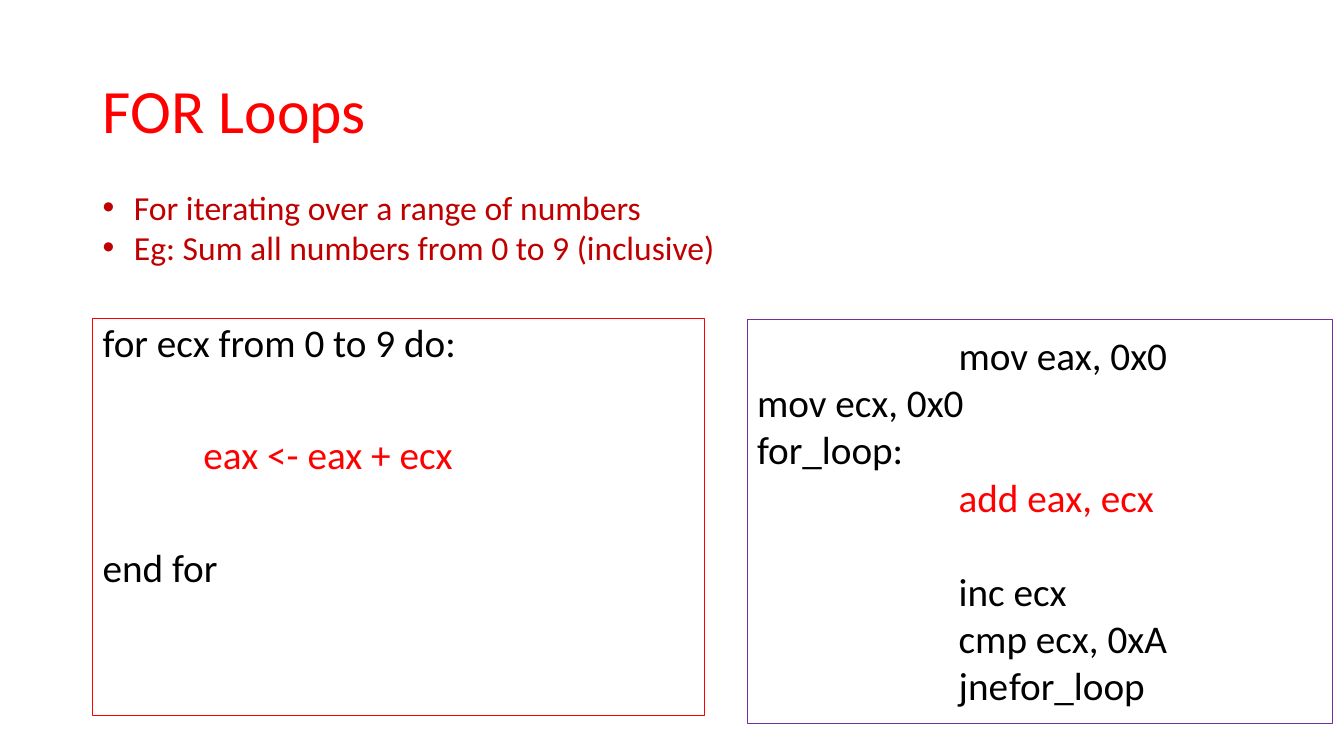
from lxml import etree
from pptx import Presentation
from pptx.dml.color import RGBColor
from pptx.enum.shapes import MSO_SHAPE
from pptx.enum.text import MSO_ANCHOR, PP_ALIGN
from pptx.oxml.ns import qn
from pptx.util import Inches, Pt

RECTANGLE = MSO_SHAPE.RECTANGLE
LEFT = PP_ALIGN.LEFT
TOP, MIDDLE = MSO_ANCHOR.TOP, MSO_ANCHOR.MIDDLE
TITLE_ONLY = 5
COLORS = {
    "red": "FF0000",
    "dark_red": "C00000",
    "purple": "7030A0",
    "black": "000000",
}


def color(name):
    return RGBColor.from_string(COLORS[name])


def place(shape, left, top, width, height):
    shape.left, shape.top = Inches(left), Inches(top)
    shape.width, shape.height = Inches(width), Inches(height)


def write(frame, text, *, size=28, ink="black", spacing=1.0, before=0,
          indent=0, bullet=False):
    para = frame.paragraphs[0]
    if para.runs:
        para = frame.add_paragraph()
    para.alignment = LEFT
    para.line_spacing = spacing
    para.space_before = Pt(before)
    span = para.add_run()
    span.text = text
    span.font.name = "Calibri"
    span.font.size = Pt(size)
    span.font.color.rgb = color(ink)
    properties = para._p.get_or_add_pPr()
    properties.set("marL", str(Inches(indent)))
    properties.set("indent", str(Inches(-indent if bullet else 0)))
    if bullet:
        etree.SubElement(properties, qn("a:buFont")).set("typeface", "Arial")
        etree.SubElement(properties, qn("a:buChar")).set("char", "•")


def add_title(page, text):
    title = page.shapes.title
    place(title, 0.92, 0.4, 11.5, 1.45)
    title.text_frame.vertical_anchor = MIDDLE
    write(title.text_frame, text, size=44, ink="red", spacing=0.9)


def add_bullets(page, lines):
    box = page.shapes.add_textbox(
        Inches(0.92), Inches(1.8), Inches(6.5), Inches(0.91))
    box.text_frame.word_wrap = True
    for line in lines:
        write(box.text_frame, line, size=24, ink="dark_red", indent=0.31,
              bullet=True)


def add_code_panel(page, bounds, outline, lines, spacing=1.0, inset=0.05):
    panel = page.shapes.add_shape(RECTANGLE, *map(Inches, bounds))
    panel.shadow.inherit = False
    panel.fill.background()
    panel.line.color.rgb = color(outline)
    panel.line.width = Pt(0.75)
    frame = panel.text_frame
    frame.word_wrap = True
    frame.vertical_anchor = TOP
    frame.margin_top = Inches(inset)
    for text, indent, ink, before in lines:
        write(frame, text, ink=ink, spacing=spacing, before=before,
              indent=indent)


def main():
    deck = Presentation()
    deck.slide_width, deck.slide_height = Inches(13.33), Inches(7.5)
    page = deck.slides.add_slide(deck.slide_layouts[TITLE_ONLY])
    add_title(page, "FOR Loops")
    add_code_panel(page, (0.92, 3.16, 6.07, 3.94), "red", [
        ("for ecx from 0 to 9 do:", 0, "black", 0),
        ("eax <- eax + ecx", 1, "red", 50),
        ("end for", 0, "black", 50),
    ], spacing=0.9)
    add_code_panel(page, (7.41, 3.17, 5.81, 4.01), "purple", [
        ("mov eax, 0x0", 2, "black", 0),
        ("mov ecx, 0x0", 0, "black", 0),
        ("for_loop:", 0, "black", 0),
        ("add eax, ecx", 2, "red", 0),
        ("inc ecx", 2, "black", 34),
        ("cmp ecx, 0xA", 2, "black", 0),
        ("jne\tfor_loop", 2, "black", 0),
    ], inset=0.12)
    add_bullets(page, [
        "For iterating over a range of numbers",
        "Eg: Sum all numbers from 0 to 9 (inclusive)",
    ])
    deck.save("out.pptx")


if __name__ == "__main__":
    main()
